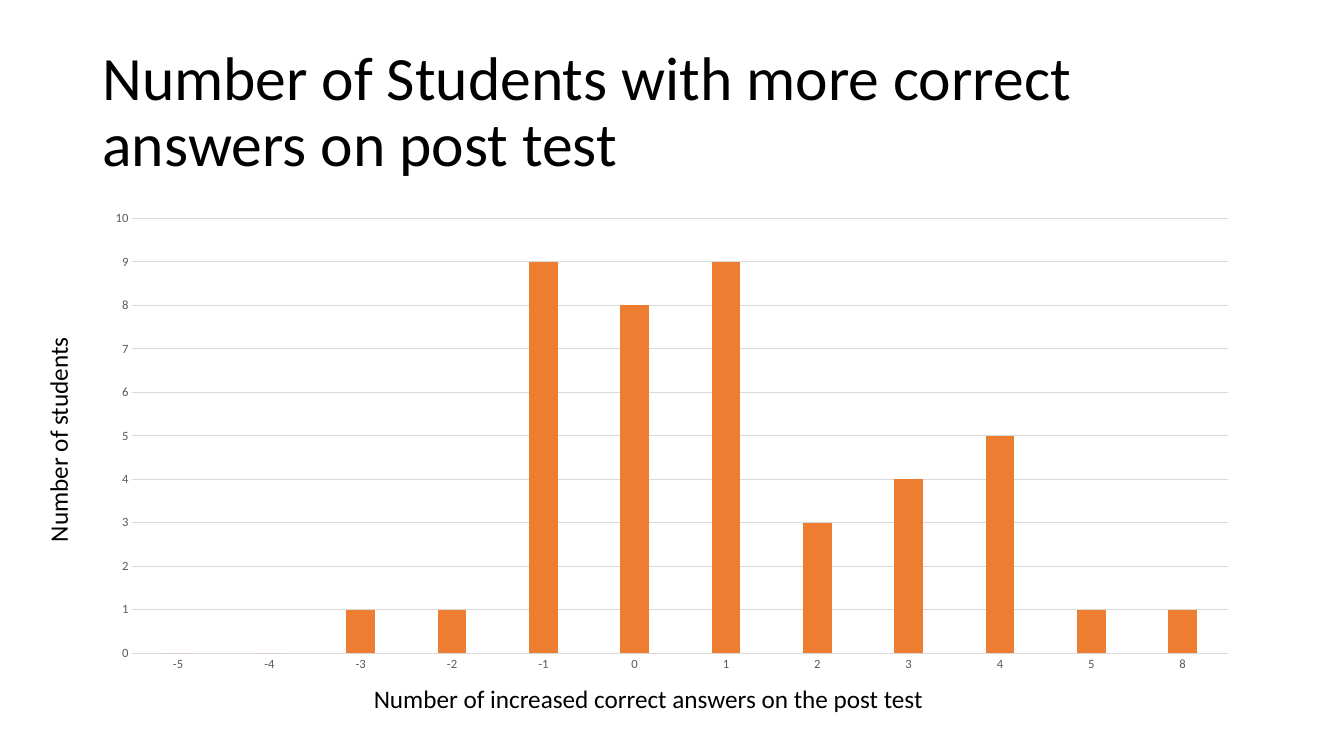
from dataclasses import dataclass

from pptx import Presentation
from pptx.chart.data import CategoryChartData
from pptx.dml.color import RGBColor
from pptx.enum.chart import XL_CHART_TYPE as ChartType, XL_TICK_MARK as TickMark
from pptx.enum.text import MSO_ANCHOR as Anchor
from pptx.util import Cm, Pt


@dataclass(frozen=True)
class Theme:
    font: str = "Calibri"
    text: RGBColor = RGBColor(0x00, 0x00, 0x00)
    tick_text: RGBColor = RGBColor(0x59, 0x59, 0x59)
    grid: RGBColor = RGBColor(0xD9, 0xD9, 0xD9)
    bar: RGBColor = RGBColor(0xED, 0x7D, 0x31)
    title_size: float = 44
    label_size: float = 18
    chart_size: float = 10
    tick_size: float = 9
    line_width: float = 0.75


class SlideBuilder:
    def __init__(self, slide, theme):
        self.slide = slide
        self.theme = theme

    def style_font(self, font, size, color):
        font.name = self.theme.font
        font.size = Pt(size)
        font.color.rgb = color

    def style_line(self, line):
        line.color.rgb = self.theme.grid
        line.width = Pt(self.theme.line_width)

    def add_text(self, text, box, size, anchor=Anchor.TOP, spacing=1.0, rotation=0):
        shape = self.slide.shapes.add_textbox(*map(Cm, box))
        shape.rotation = rotation
        frame = shape.text_frame
        frame.word_wrap = True
        frame.vertical_anchor = anchor
        paragraph = frame.paragraphs[0]
        paragraph.line_spacing = spacing
        run = paragraph.add_run()
        run.text = text
        self.style_font(run.font, size, self.theme.text)

    def style_axis(self, axis):
        axis.major_tick_mark = TickMark.NONE
        axis.minor_tick_mark = TickMark.NONE
        self.style_font(axis.tick_labels.font, self.theme.tick_size, self.theme.tick_text)

    def add_column_chart(self, name, counts, box, maximum):
        data = CategoryChartData()
        data.categories = list(counts)
        data.add_series(name, list(counts.values()))
        frame = self.slide.shapes.add_chart(ChartType.COLUMN_CLUSTERED, *map(Cm, box), data)
        chart = frame.chart
        chart.has_title = False
        chart.has_legend = False
        self.style_font(chart.font, self.theme.chart_size, self.theme.text)

        plot = chart.plots[0]
        plot.vary_by_categories = False
        plot.gap_width = 219
        plot.overlap = -27
        fill = plot.series[0].format.fill
        fill.solid()
        fill.fore_color.rgb = self.theme.bar

        category_axis, value_axis = chart.category_axis, chart.value_axis
        self.style_axis(category_axis)
        self.style_axis(value_axis)
        self.style_line(category_axis.format.line)
        value_axis.format.line.fill.background()
        value_axis.has_major_gridlines = True
        self.style_line(value_axis.major_gridlines.format.line)
        value_axis.minimum_scale = 0
        value_axis.maximum_scale = maximum
        value_axis.major_unit = 1


def main():
    presentation = Presentation()
    presentation.slide_width = Cm(33.87)
    presentation.slide_height = Cm(19.05)
    slide = presentation.slides.add_slide(presentation.slide_layouts[6])
    theme = Theme()
    builder = SlideBuilder(slide, theme)

    students_by_increase = {
        "-5": 0, "-4": 0, "-3": 1, "-2": 1, "-1": 9, "0": 8,
        "1": 9, "2": 3, "3": 4, "4": 5, "5": 1, "8": 1,
    }
    builder.add_text(
        "Number of Students with more correct answers on post test",
        (2.33, 1.02, 29.21, 3.68), theme.title_size, Anchor.MIDDLE, spacing=0.9,
    )
    builder.add_column_chart(
        "Series 1", students_by_increase, (2.33, 5.08, 29.21, 12.09), maximum=10
    )
    builder.add_text(
        "Number of increased correct answers on the post test",
        (9.17, 17.09, 17.63, 1.02), theme.label_size,
    )
    builder.add_text(
        "Number of students", (-2.26, 9.68, 7.44, 1.02), theme.label_size, rotation=270
    )
    presentation.save("out.pptx")


if __name__ == "__main__":
    main()
